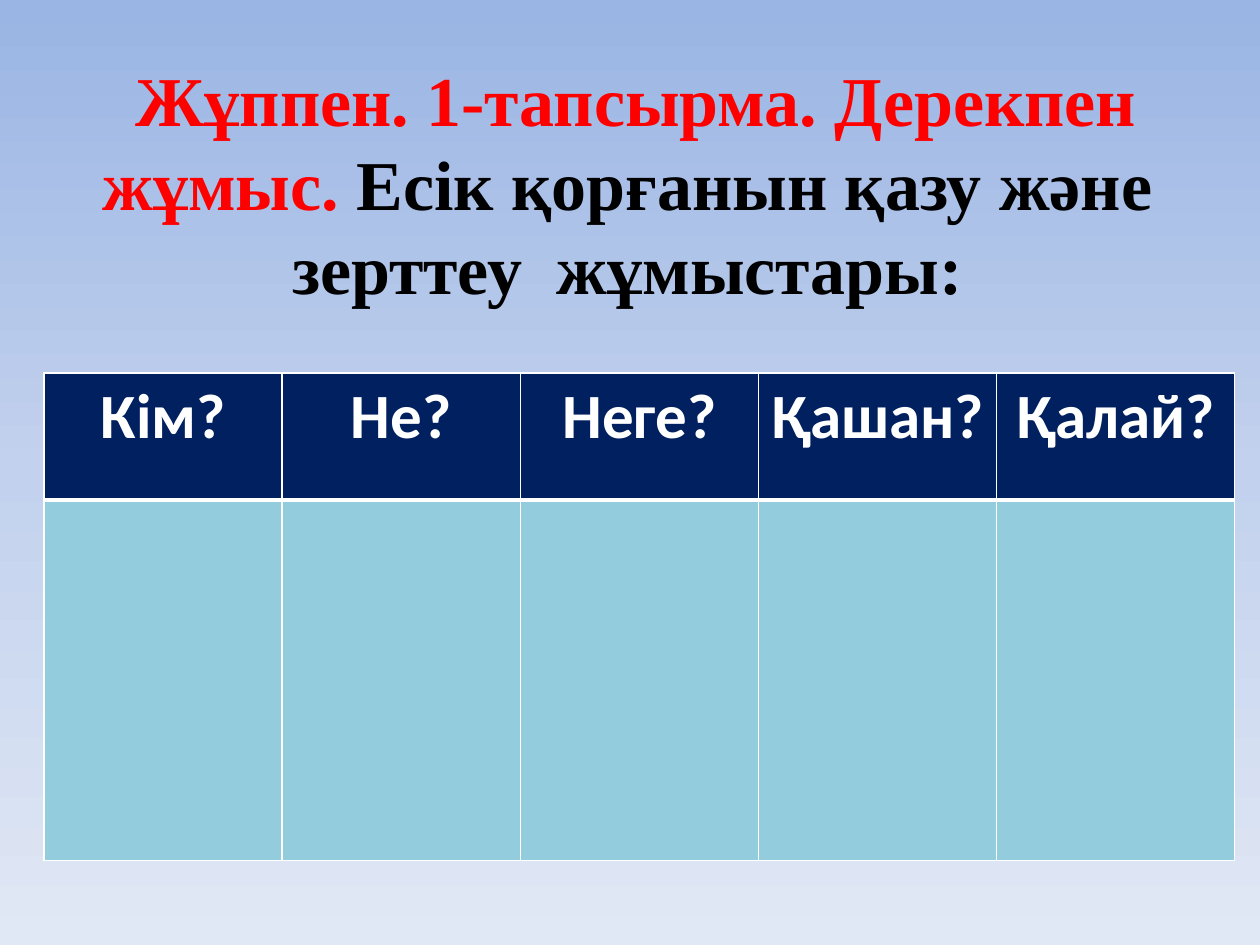
from copy import deepcopy

from lxml import etree
from pptx import Presentation
from pptx import util as u
from pptx.dml.color import RGBColor
from pptx.enum import text
from pptx.oxml import ns

COLORS = {
    "sky_top": "9AB5E4",
    "sky_middle": "C2D1ED",
    "sky_bottom": "E1E8F5",
    "header": "002060",
    "answer": "93CDDD",
    "white": "FFFFFF",
    "task": "FF0000",
    "topic": "000000",
}
TITLE = [
    (" Жұппен. 1-тапсырма. Дерекпен жұмыс. ", "task"),
    ("Есік қорғанын қазу және зерттеу  жұмыстары:", "topic"),
]
QUESTIONS = ["Кім?", "Не?", "Неге?", "Қашан?", "Қалай?"]
ROW_HEIGHTS = [1.01, 2.86]


def rgb(name):
    return RGBColor.from_string(COLORS[name])


def style_span(span, font_name, size, color):
    span.font.name = font_name
    span.font.size = u.Pt(size)
    span.font.bold = True
    span.font.color.rgb = rgb(color)


def paint_background(slide):
    fill = slide.background.fill
    fill.gradient()
    fill.gradient_angle = 270
    stop_list = slide.element.find(".//" + ns.qn("a:gsLst"))
    stop_list.insert(1, deepcopy(stop_list[0]))
    names = ["sky_top", "sky_middle", "sky_bottom"]
    for index, (stop, name) in enumerate(zip(fill.gradient_stops, names)):
        stop.position = index / 2
        stop.color.rgb = rgb(name)


def add_border(cell, side, width):
    properties = cell._tc.get_or_add_tcPr()
    line = etree.SubElement(properties, ns.qn(f"a:ln{side}"), w=str(u.Pt(width)))
    fill = etree.SubElement(line, ns.qn("a:solidFill"))
    etree.SubElement(fill, ns.qn("a:srgbClr"), val=COLORS["white"])


def style_cell(cell, row):
    widths = {"L": 1, "R": 1, "T": 1 if row == 0 else 3, "B": 3 if row == 0 else 1}
    for side, width in widths.items():
        add_border(cell, side, width)
    cell.fill.solid()
    cell.fill.fore_color.rgb = rgb("header" if row == 0 else "answer")


def write_question(cell, question):
    cell.margin_left = cell.margin_right = u.Inches(0.07)
    cell.margin_top = cell.margin_bottom = 0
    para = cell.text_frame.paragraphs[0]
    para.text = question
    para.alignment = text.PP_ALIGN.CENTER
    para.line_spacing = 1.07
    style_span(para.runs[0], "Calibri", 36, "white")


def add_question_table(slide):
    table = slide.shapes.add_table(
        len(ROW_HEIGHTS), len(QUESTIONS),
        u.Inches(0.35), u.Inches(2.96), u.Inches(9.45), u.Inches(sum(ROW_HEIGHTS)),
    ).table
    for row, height in enumerate(ROW_HEIGHTS):
        table.rows[row].height = u.Inches(height)
        for cell in table.rows[row].cells:
            style_cell(cell, row)
    for column, question in enumerate(QUESTIONS):
        write_question(table.cell(0, column), question)


def add_title(slide):
    box = slide.shapes.add_textbox(
        u.Inches(0.12), u.Inches(0.39), u.Inches(9.72), u.Inches(2.12)
    )
    frame = box.text_frame
    frame.word_wrap = True
    frame.auto_size = text.MSO_AUTO_SIZE.SHAPE_TO_FIT_TEXT
    frame.vertical_anchor = text.MSO_ANCHOR.MIDDLE
    para = frame.paragraphs[0]
    para.alignment = text.PP_ALIGN.CENTER
    for words, color in TITLE:
        span = para.add_run()
        span.text = words
        style_span(span, "Times New Roman", 40, color)


def main():
    deck = Presentation()
    deck.slide_width = u.Inches(10)
    deck.slide_height = u.Inches(7.5)
    slide = deck.slides.add_slide(deck.slide_layouts[6])
    paint_background(slide)
    add_question_table(slide)
    add_title(slide)
    deck.save("out.pptx")


if __name__ == "__main__":
    main()
